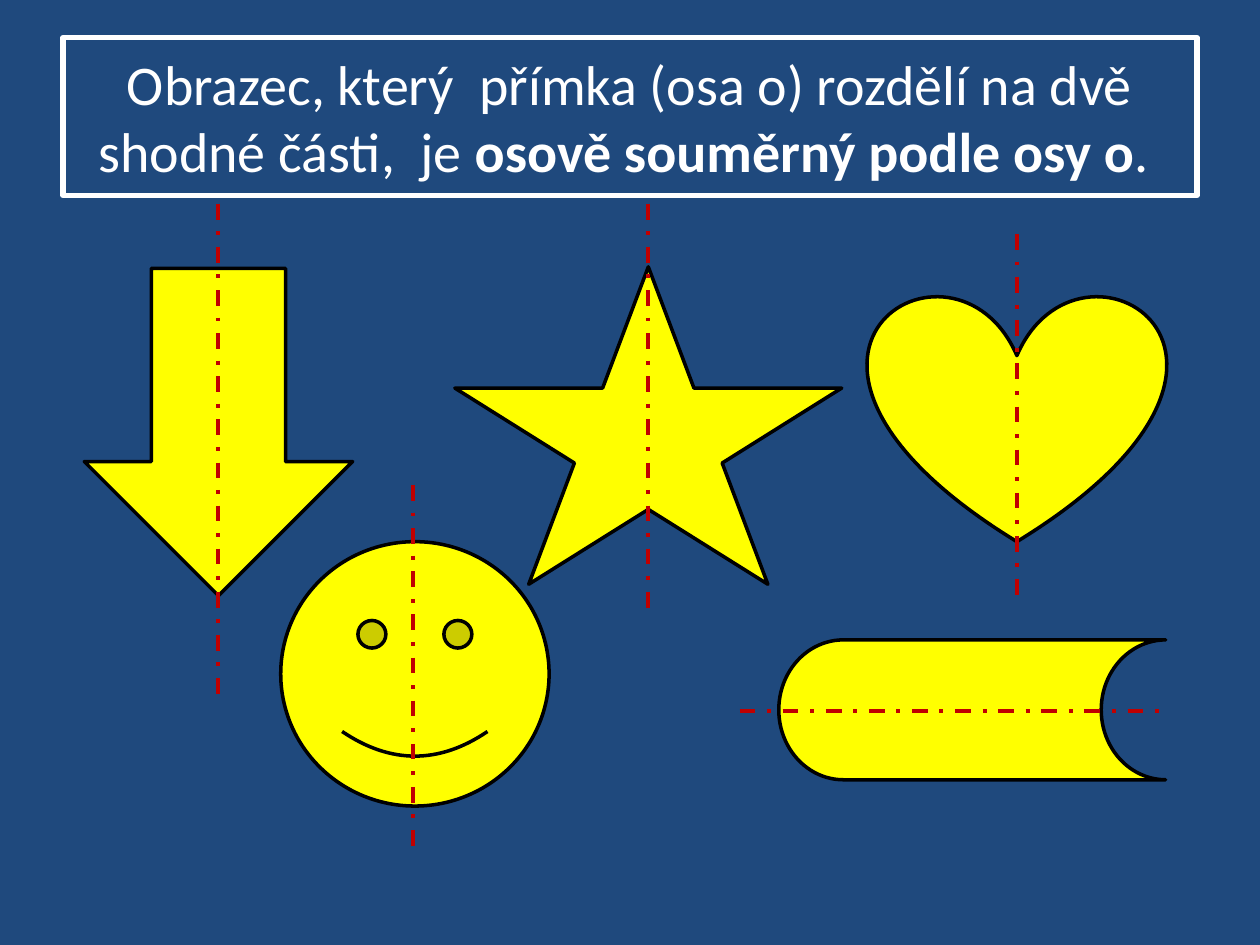
from lxml import etree
from pptx import Presentation
from pptx import util as u
from pptx.dml.color import RGBColor
from pptx.enum import dml, shapes, text
from pptx.oxml import ns

NAVY = RGBColor(0x1F, 0x49, 0x7D)
WHITE = RGBColor(0xFF, 0xFF, 0xFF)
YELLOW = RGBColor(0xFF, 0xFF, 0x00)
BLACK = RGBColor(0x00, 0x00, 0x00)
RED = RGBColor(0xC0, 0x00, 0x00)


class SymmetrySlide:
    font = "Calibri"
    title_size = u.Pt(32)

    def __init__(self, deck):
        self.slide = deck.slides.add_slide(deck.slide_layouts[5])
        fill = self.slide.background.fill
        fill.solid()
        fill.fore_color.rgb = NAVY

    def outline(self, line, color, width):
        line.color.rgb = color
        line.width = u.Pt(width)

    def title(self, box, runs):
        heading = self.slide.shapes.title
        heading.left, heading.top, heading.width, heading.height = map(u.Cm, box)
        self.outline(heading.line, WHITE, 3)
        frame = heading.text_frame
        frame.word_wrap = True
        frame.auto_size = text.MSO_AUTO_SIZE.NONE
        frame.vertical_anchor = text.MSO_ANCHOR.MIDDLE
        paragraph = frame.paragraphs[0]
        paragraph.alignment = text.PP_ALIGN.CENTER
        for wording, bold in runs:
            run = paragraph.add_run()
            run.text = wording
            run.font.name = self.font
            run.font.size = self.title_size
            run.font.bold = bold
            run.font.color.rgb = WHITE

    def figure(self, preset, box):
        figure = self.slide.shapes.add_shape(preset, *map(u.Cm, box))
        figure.shadow.inherit = False
        figure.fill.solid()
        figure.fill.fore_color.rgb = YELLOW
        self.outline(figure.line, BLACK, 2)

    def axis(self, start, end):
        axis = self.slide.shapes.add_connector(
            shapes.MSO_CONNECTOR.STRAIGHT, *map(u.Cm, start + end))
        self.outline(axis.line, RED, 2.25)
        axis.line.dash_style = dml.MSO_LINE.DASH_DOT
        properties = axis._element.find(ns.qn("p:spPr"))
        etree.SubElement(properties, ns.qn("a:effectLst"))


def main():
    deck = Presentation()
    deck.slide_width, deck.slide_height = u.Cm(25.4), u.Cm(19.05)
    page = SymmetrySlide(deck)
    page.title((1.27, 0.76, 22.86, 3.18), [
        ("Obrazec, který  přímka (osa o) rozdělí na dvě shodné části,  je ", False),
        ("osově souměrný podle osy o", True),
        (". ", False),
    ])

    preset = shapes.MSO_SHAPE
    figures = [
        (preset.DOWN_ARROW, (1.7, 5.41, 5.41, 6.6)),
        (preset.SMILEY_FACE, (5.66, 10.92, 5.41, 5.33)),
        (preset.STAR_5_POINT, (9.17, 5.38, 7.8, 6.4)),
        (preset.FLOWCHART_STORED_DATA, (15.7, 12.9, 7.8, 2.82)),
        (preset.HEART, (17.5, 5.92, 6, 5)),
    ]
    for kind, box in figures:
        page.figure(kind, box)

    vertical_axes = [
        (4.39, 4.11, 14.15),
        (13.06, 4.11, 12.29),
        (20.5, 4.72, 12.01),
        (8.33, 9.78, 17.2),
    ]
    for x, top, bottom in vertical_axes:
        page.axis((x, top), (x, bottom))
    page.axis((14.91, 14.33), (23.5, 14.33))

    deck.save("out.pptx")


if __name__ == "__main__":
    main()
